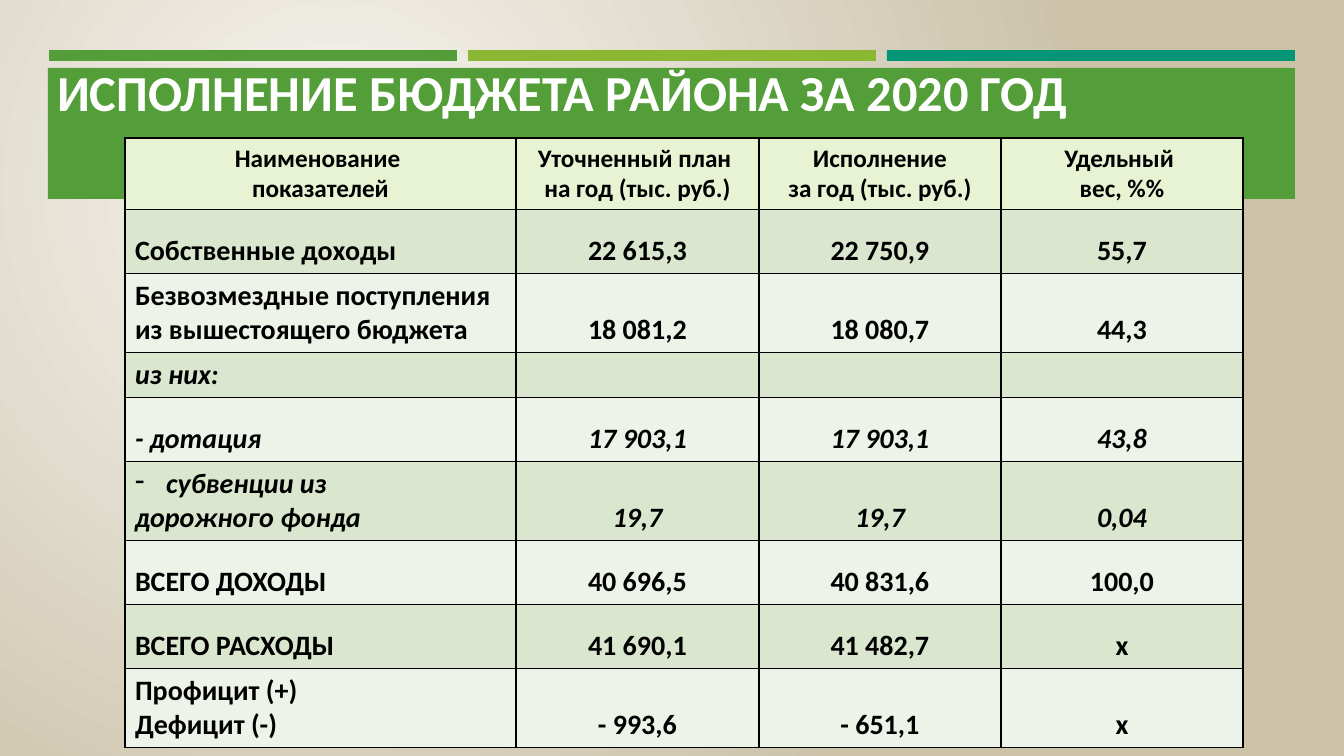
from dataclasses import dataclass
from lxml.etree import SubElement
from pptx import Presentation
from pptx.dml.color import RGBColor
from pptx.enum.shapes import MSO_SHAPE as Shape
from pptx.enum.text import MSO_ANCHOR as Anchor, MSO_AUTO_SIZE as AutoSize, PP_ALIGN as Align
from pptx.oxml.ns import qn
from pptx.util import Pt

# Content
TITLE = "ИСПОЛНЕНИЕ БЮДЖЕТА РАЙОНА ЗА 2020 ГОД"
HEADER = ("Наименование \nпоказателей", "Уточненный план \nна год (тыс. руб.)",
          "Исполнение\nза год (тыс. руб.)", "Удельный \nвес, %%")
# Each row: height in px, italic, cells
BUDGET = [
    (64, False, ("Собственные доходы", "22 615,3", "22 750,9", "55,7")),
    (79, False, ("Безвозмездные поступления из вышестоящего бюджета",
                 "18 081,2", "18 080,7", "44,3")),
    (45, True, ("из них:", "", "", "")),
    (64, True, ("- дотация", "17 903,1", "17 903,1", "43,8")),
    (79, True, ("• субвенции из\nдорожного фонда", "19,7", "19,7", "0,04")),
    (64, False, ("ВСЕГО ДОХОДЫ", "40 696,5", "40 831,6", "100,0")),
    (64, False, ("ВСЕГО РАСХОДЫ", "41 690,1", "41 482,7", "х")),
    (79, False, ("Профицит (+)\nДефицит (-)", "- 993,6", "- 651,1", "х")),
]
BULLET = "• "  # marks a line that gets a dash bullet
HEADER_HEIGHT = 71
COLUMNS = (391, 243, 242, 242)
TABLE_LEFT, TABLE_TOP = 125, 138


@dataclass(frozen=True)
class Theme:
    font: str = "Calibri"
    title_size: int = 36
    header_size: int = 18
    body_size: int = 20
    white: str = "FFFFFF"
    ink: str = "000000"
    green: str = "549E39"
    bars: tuple = ("549E39", "8AB833", "029676")
    header_fill: str = "E8F3D4"
    bands: tuple = ("DAE6CE", "EDF3E8")
    backdrop: tuple = ("F7F5F2", "CBC2A8")


THEME = Theme()


def px(length):
    return round(length * 914400 / 100.8)


def color(value):
    return RGBColor.from_string(value)


def style(target, values):
    for name, value in values.items():
        setattr(target, name, value)


def place(box, left, top, width, height):
    style(box, {"left": px(left), "top": px(top), "width": px(width), "height": px(height)})


def write(para, text, size, ink, italic=False):
    span = para.add_run()
    span.text = text
    style(span.font, {"name": THEME.font, "size": Pt(size), "bold": True, "italic": italic})
    span.font.color.rgb = color(ink)


def add_bar(page, left, top, width, height, fill):
    bar = page.shapes.add_shape(Shape.RECTANGLE, px(left), px(top), px(width), px(height))
    bar.shadow.inherit = False
    bar.fill.solid()
    bar.fill.fore_color.rgb = color(fill)
    bar.line.fill.background()


def add_dash(para):
    props = para._p.get_or_add_pPr()
    props.set("marL", str(px(31)))
    props.set("indent", str(-px(31)))
    SubElement(props, qn("a:buFontTx"))
    SubElement(props, qn("a:buChar"), char="-")


def add_borders(cell):
    props = cell._tc.get_or_add_tcPr()
    for index, side in enumerate(("a:lnL", "a:lnR", "a:lnT", "a:lnB")):
        line = props.makeelement(qn(side), {"w": str(Pt(1))})
        SubElement(SubElement(line, qn("a:solidFill")), qn("a:srgbClr"), val=THEME.ink)
        props.insert(index, line)


def fill_cell(cell, text, fill, size, align, anchor, italic):
    cell.fill.solid()
    cell.fill.fore_color.rgb = color(fill)
    cell.vertical_anchor = anchor
    add_borders(cell)
    if not text:
        return
    frame = cell.text_frame
    for index, line in enumerate(text.split("\n")):
        para = frame.add_paragraph() if index else frame.paragraphs[0]
        para.alignment = align
        if line.startswith(BULLET):
            add_dash(para)
        write(para, line.removeprefix(BULLET), size, THEME.ink, italic)


def paint_background(page):
    fill = page.background.fill
    fill.gradient()
    for stop, position, value in zip(fill.gradient_stops, (0, 1), THEME.backdrop):
        stop.position = position
        stop.color.rgb = color(value)
    gradient = page._element.find(".//" + qn("a:gradFill"))
    gradient.remove(gradient.find(qn("a:lin")))
    circle = SubElement(gradient, qn("a:path"), path="circle")
    SubElement(circle, qn("a:fillToRect"), l="50000", t="50000", r="100000", b="100000")


def add_title(page):
    title = page.shapes.title
    page.shapes._spTree.append(title._element)  # bring in front of the green panel
    place(title, 47, 53, 1159, 86)
    style(title.text_frame, {"word_wrap": True, "auto_size": AutoSize.NONE,
                             "vertical_anchor": Anchor.MIDDLE})
    para = title.text_frame.paragraphs[0]
    style(para, {"alignment": Align.LEFT, "line_spacing": 0.85})
    write(para, TITLE, THEME.title_size, THEME.white)


def add_budget_table(page):
    heights = [HEADER_HEIGHT] + [height for height, _, _ in BUDGET]
    frame = page.shapes.add_table(len(heights), len(COLUMNS), px(TABLE_LEFT), px(TABLE_TOP),
                                  px(sum(COLUMNS)), px(sum(heights)))
    table = frame.table
    style(table, {"first_row": False, "horz_banding": False})
    for column, width in zip(table.columns, COLUMNS):
        column.width = px(width)
    for row, height in zip(table.rows, heights):
        row.height = px(height)
    for index, text in enumerate(HEADER):
        fill_cell(table.cell(0, index), text, THEME.header_fill, THEME.header_size,
                  Align.CENTER, Anchor.MIDDLE, False)
    for number, (_, italic, texts) in enumerate(BUDGET):
        for index, text in enumerate(texts):
            fill_cell(table.cell(number + 1, index), text, THEME.bands[number % 2],
                      THEME.body_size, Align.CENTER if index else Align.LEFT,
                      Anchor.BOTTOM, italic)


def main():
    deck = Presentation()
    style(deck, {"slide_width": px(1344), "slide_height": px(756)})
    page = deck.slides.add_slide(deck.slide_layouts[5])
    paint_background(page)
    # Three bars above the title panel
    for index, fill in enumerate(THEME.bars):
        add_bar(page, 49 + index * 419, 50, 408, 11, fill)
    add_bar(page, 48, 68, 1247, 131, THEME.green)
    add_title(page)
    add_budget_table(page)
    deck.save("out.pptx")


if __name__ == "__main__":
    main()
